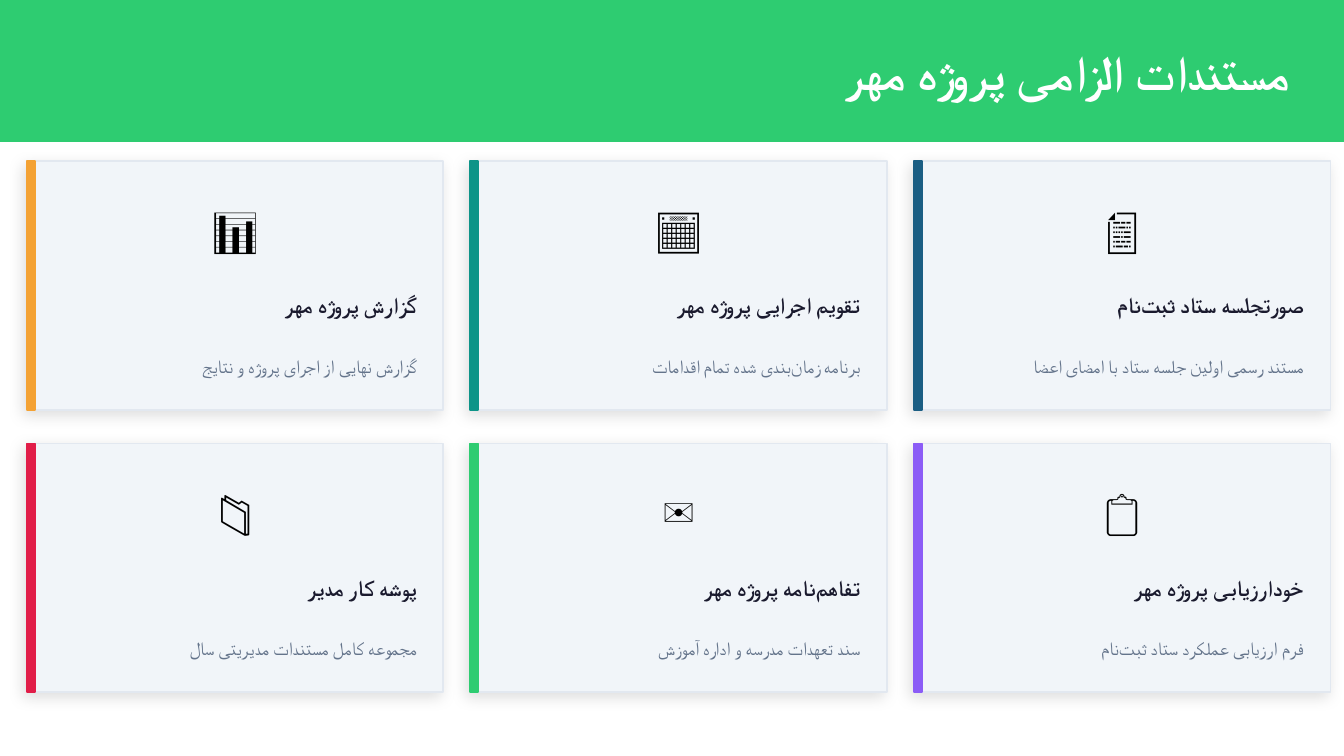
from lxml import etree
from pptx import Presentation
from pptx.dml.color import RGBColor
from pptx.enum.shapes import MSO_SHAPE
from pptx.enum.text import MSO_ANCHOR, PP_ALIGN
from pptx.oxml import parse_xml
from pptx.oxml.ns import nsdecls, qn
from pptx.util import Pt

RECTANGLE = MSO_SHAPE.RECTANGLE
MIDDLE = MSO_ANCHOR.MIDDLE
CENTER = PP_ALIGN.CENTER
RIGHT = PP_ALIGN.RIGHT
FONT = "Calibri"
HALF_SPACE = chr(0x200C)
COLORS = {
    "white": "FFFFFF", "black": "000000", "green": "2ECC71",
    "card": "F1F5F9", "border": "E2E8F0", "heading": "1A1A2E", "detail": "64748B",
    "blue": "1B5E83", "teal": "0D9488", "orange": "F4A234",
    "purple": "8B5CF6", "red": "E11D48",
}
SHADOW = (
    f'<a:outerShdw {nsdecls("a")} blurRad="{Pt(8)}" dist="{Pt(3)}" dir="8100000" '
    'algn="bl" rotWithShape="0">'
    f'<a:srgbClr val="{COLORS["black"]}"><a:alpha val="12000"/></a:srgbClr></a:outerShdw>'
)

presentation = Presentation()
presentation.slide_width = Pt(720)
presentation.slide_height = Pt(405)
slide = presentation.slides.add_slide(presentation.slide_layouts[6])
slide.background.fill.solid()
slide.background.fill.fore_color.rgb = RGBColor.from_string(COLORS["white"])


def add_rectangle(left, top, width, height, fill, line):
    shape = slide.shapes.add_shape(RECTANGLE, Pt(left), Pt(top), Pt(width), Pt(height))
    shape.fill.solid()
    shape.fill.fore_color.rgb = RGBColor.from_string(COLORS[fill])
    shape.line.color.rgb = RGBColor.from_string(COLORS[line])
    shape.line.width = Pt(1)
    shape.shadow.inherit = False
    return shape


def add_text(left, top, width, height, text, size, color, bold=False, centered=False):
    box = slide.shapes.add_textbox(Pt(left), Pt(top), Pt(width), Pt(height))
    frame = box.text_frame
    frame.word_wrap = True
    frame.vertical_anchor = MIDDLE
    paragraph = frame.paragraphs[0]
    paragraph.alignment = CENTER if centered else RIGHT
    if not centered:
        paragraph._p.get_or_add_pPr().set("rtl", "1")
    run = paragraph.add_run()
    run.text = text
    run.font.size = Pt(size)
    run.font.bold = bold
    run.font.color.rgb = RGBColor.from_string(COLORS[color])
    run.font.name = FONT
    for script in ("a:ea", "a:cs"):
        etree.SubElement(run.font._element, qn(script)).set("typeface", FONT)


add_rectangle(0, 0, 720, 75.6, "green", "green")
add_text(21.6, 10.8, 676.8, 54, "مستندات الزامی پروژه مهر", 26, "white", bold=True)

cards = [
    ("📄", f"صورتجلسه ستاد ثبت{HALF_SPACE}نام", "مستند رسمی اولین جلسه ستاد با امضای اعضا", "blue"),
    ("📅", "تقویم اجرایی پروژه مهر", f"برنامه زمان{HALF_SPACE}بندی شده تمام اقدامات", "teal"),
    ("📊", "گزارش پروژه مهر", "گزارش نهایی از اجرای پروژه و نتایج", "orange"),
    ("📋", "خودارزیابی پروژه مهر", f"فرم ارزیابی عملکرد ستاد ثبت{HALF_SPACE}نام", "purple"),
    ("✉", f"تفاهم{HALF_SPACE}نامه پروژه مهر", "سند تعهدات مدرسه و اداره آموزش", "green"),
    ("📁", "پوشه کار مدیر", "مجموعه کامل مستندات مدیریتی سال", "red"),
]
card_width, card_height = 223.2, 133.2

for index, (icon, heading, detail, accent) in enumerate(cards):
    row, column = divmod(index, 3)
    left = 489.6 - column * 237.6
    top = 86.4 + row * 151.2
    card = add_rectangle(left, top, card_width, card_height, "card", "border")
    card._element.spPr.find(qn("a:effectLst")).append(parse_xml(SHADOW))
    add_rectangle(left, top, 4.32, card_height, accent, accent)
    add_text(left, top + 14.4, card_width, 43.2, icon, 24, "black", centered=True)
    add_text(left + 10.8, top + 59.04, 205.2, 36, heading, 12, "heading", bold=True)
    add_text(left + 10.8, top + 93.6, 205.2, 32.4, detail, 10, "detail")

presentation.save("out.pptx")
